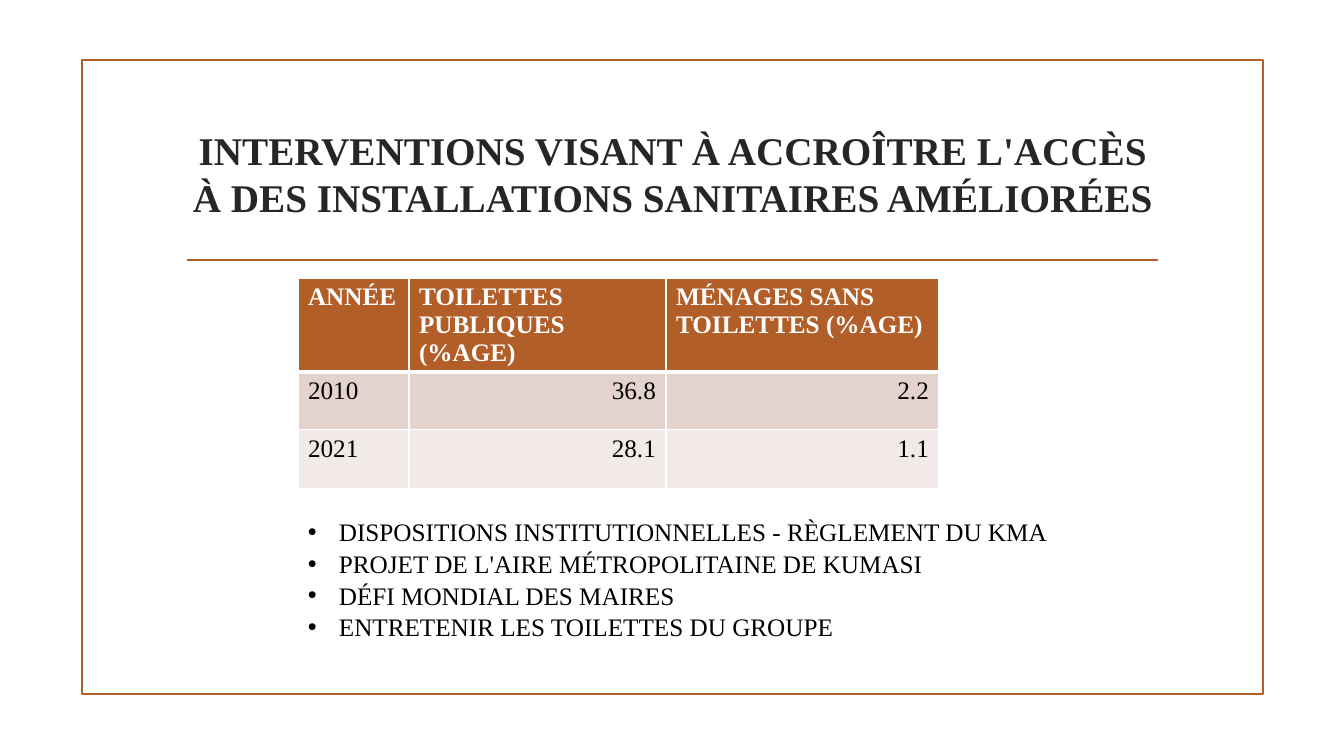
from lxml import etree
from pptx import Presentation
from pptx.dml.color import RGBColor
from pptx.enum.shapes import MSO_CONNECTOR, MSO_SHAPE
from pptx.enum.text import MSO_ANCHOR, PP_ALIGN
from pptx.oxml.ns import qn
from pptx.util import Emu, Pt

RECTANGLE = MSO_SHAPE.RECTANGLE
STRAIGHT = MSO_CONNECTOR.STRAIGHT
MIDDLE = MSO_ANCHOR.MIDDLE
TOP = MSO_ANCHOR.TOP
LEFT, CENTER, RIGHT = PP_ALIGN.LEFT, PP_ALIGN.CENTER, PP_ALIGN.RIGHT

PX = 914400 / 100.8
FONT = "Times New Roman"
COLORS = {
    "accent": "B15E28",
    "title": "262626",
    "text": "000000",
    "white": "FFFFFF",
    "band_dark": "E4D2CD",
    "band_light": "F2EAE8",
}
TITLE = "INTERVENTIONS VISANT À ACCROÎTRE L'ACCÈS À DES INSTALLATIONS SANITAIRES AMÉLIORÉES"
ROWS = [
    ["ANNÉE", "TOILETTES PUBLIQUES (%AGE)", "MÉNAGES SANS TOILETTES (%AGE)"],
    ["2010", "36.8", "2.2"],
    ["2021", "28.1", "1.1"],
]
BULLETS = [
    "DISPOSITIONS INSTITUTIONNELLES - RÈGLEMENT DU KMA",
    "PROJET DE L'AIRE MÉTROPOLITAINE DE KUMASI",
    "DÉFI MONDIAL DES MAIRES",
    "ENTRETENIR LES TOILETTES DU GROUPE",
]


def px(value):
    return Emu(round(value * PX))


def color(name):
    return RGBColor.from_string(COLORS[name])


def write(paragraph, text, size=18, color_name="text", bold=False, align=LEFT, bullet_indent=0):
    if bullet_indent:
        properties = paragraph._p.get_or_add_pPr()
        properties.set("marL", str(px(bullet_indent)))
        properties.set("indent", str(-px(bullet_indent)))
        etree.SubElement(properties, qn("a:buFont"), typeface="Arial")
        etree.SubElement(properties, qn("a:buChar"), char="•")
    paragraph.alignment = align
    run = paragraph.add_run()
    run.text = text
    run.font.name = FONT
    run.font.size = Pt(size)
    run.font.bold = bold
    run.font.color.rgb = color(color_name)


class SlideBuilder:
    def __init__(self, presentation):
        self.slide = presentation.slides.add_slide(presentation.slide_layouts[5])
        self.line_width = Pt(1.25)
        self.accent = color("accent")

    def frame(self, left, top, width, height):
        shape = self.slide.shapes.add_shape(RECTANGLE, px(left), px(top), px(width), px(height))
        shape.shadow.inherit = False
        shape.fill.background()
        shape.line.color.rgb = self.accent
        shape.line.width = self.line_width

    def rule(self, left, right, y):
        connector = self.slide.shapes.add_connector(STRAIGHT, px(left), px(y), px(right), px(y))
        connector.line.color.rgb = self.accent
        connector.line.width = self.line_width
        etree.SubElement(connector._element.spPr, qn("a:effectLst"))

    def title(self, text, left, top, width, height):
        shape = self.slide.shapes.title
        shape.left, shape.top, shape.width, shape.height = map(px, (left, top, width, height))
        shape.text_frame.word_wrap = True
        shape.text_frame.vertical_anchor = MIDDLE
        write(shape.text_frame.paragraphs[0], text, size=28, color_name="title", bold=True, align=CENTER)

    def cell_border(self, cell, side, width):
        properties = cell._tc.get_or_add_tcPr()
        line = etree.SubElement(properties, qn(f"a:{side}"), w=str(Pt(width)))
        fill = etree.SubElement(line, qn("a:solidFill"))
        etree.SubElement(fill, qn("a:srgbClr"), val=COLORS["white"])

    def table(self, rows, left, top, widths, heights):
        frame = self.slide.shapes.add_table(
            len(rows), len(widths), px(left), px(top), px(sum(widths)), px(sum(heights)))
        table = frame.table
        for column, width in zip(table.columns, widths):
            column.width = px(width)
        fills = ["accent", "band_dark", "band_light"]
        for row_index, values in enumerate(rows):
            table.rows[row_index].height = px(heights[row_index])
            header = row_index == 0
            for column_index, value in enumerate(values):
                cell = table.cell(row_index, column_index)
                for side in ("lnL", "lnR", "lnT", "lnB"):
                    thick = (header and side == "lnB") or (row_index == 1 and side == "lnT")
                    self.cell_border(cell, side, 3 if thick else 1)
                cell.fill.solid()
                cell.fill.fore_color.rgb = color(fills[row_index])
                cell.vertical_anchor = TOP
                write(cell.text_frame.paragraphs[0], value, bold=header,
                      color_name="white" if header else "text",
                      align=RIGHT if column_index and not header else LEFT)

    def bullets(self, lines, left, top, width, height):
        text_frame = self.slide.shapes.add_textbox(px(left), px(top), px(width), px(height)).text_frame
        text_frame.word_wrap = True
        for index, line in enumerate(lines):
            paragraph = text_frame.add_paragraph() if index else text_frame.paragraphs[0]
            write(paragraph, line, bullet_indent=31)
            paragraph.line_spacing = 1.05


def main():
    presentation = Presentation()
    presentation.slide_width, presentation.slide_height = px(1344), px(756)
    builder = SlideBuilder(presentation)
    builder.frame(82, 60, 1181, 634)
    builder.rule(187, 1158, 260)
    builder.title(TITLE, 173, 101, 999, 144)
    builder.table(ROWS, 298, 278, [111, 257, 273], [93, 58, 59])
    builder.bullets(BULLETS, 298, 510, 785, 163)
    presentation.save("out.pptx")


if __name__ == "__main__":
    main()
